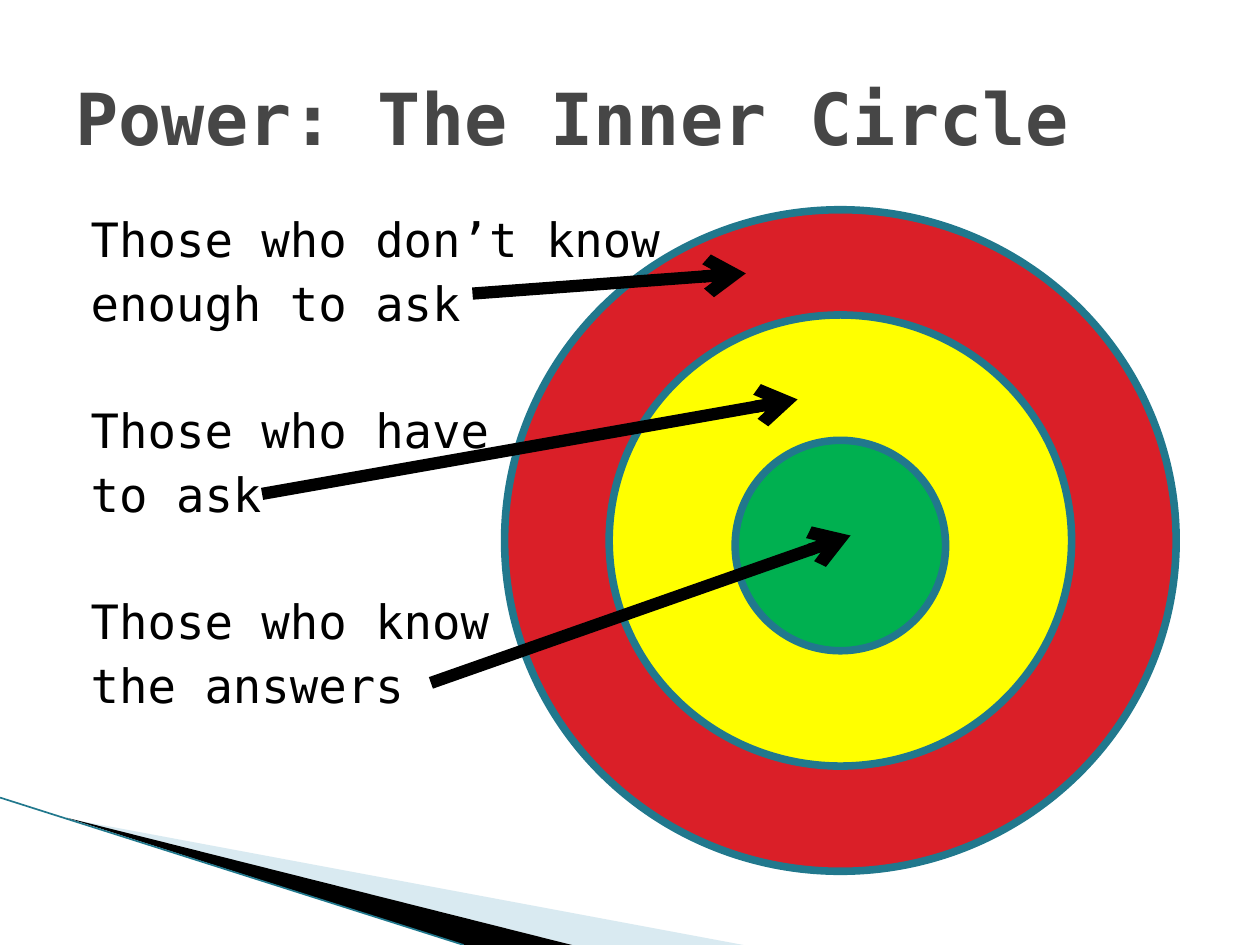
from lxml import etree
from pptx import Presentation
from pptx.dml.color import RGBColor
from pptx.enum import shapes, text
from pptx.oxml import ns
from pptx.util import Inches, Pt

WIDTH, HEIGHT = 10, 7.5
FONT = "DejaVu Sans Mono"
COLORS = {
    "title": "464646", "black": "000000", "outline": "21788D",
    "red": "DA1F28", "yellow": "FFFF00", "green": "00B050", "pale": "A0CBDC",
}
CENTER_X = 6.67
# Center height, width, height and fill, from the outer ring inwards
RINGS = [
    (4.29, 5.33, 5.25, "red"),
    (4.29, 3.67, 3.58, "yellow"),
    (4.33, 1.67, 1.67, "green"),
]
GROUPS = [
    ("Those who don’t know", "enough to ask"),
    ("Those who have", "to ask"),
    ("Those who know", "the answers"),
]
ARROWS = [
    ((3.75, 2.33), (5.92, 2.17)),
    ((2.08, 3.92), (6.33, 3.17)),
    ((3.42, 5.42), (6.75, 4.25)),
]
LINE_GAP, GROUP_GAP = 4, 40.4


def color(name):
    return RGBColor.from_string(COLORS[name])


def format_font(paragraph, color_name, **values):
    for name, value in {"name": FONT, **values}.items():
        setattr(paragraph.font, name, value)
    paragraph.font.color.rgb = color(color_name)


def place(shape, left, top, width, height):
    box = {"left": left, "top": top, "width": width, "height": height}
    for name, value in box.items():
        setattr(shape, name, Inches(value))


def add_wedge(slide, points, fill, alpha=100):
    corners = [(Inches(x), Inches(y)) for x, y in points]
    builder = slide.shapes.build_freeform(*corners[0], scale=1.0)
    builder.add_line_segments(corners[1:], close=True)
    shape = builder.convert_to_shape()
    shape.shadow.inherit = False
    shape.fill.solid()
    shape.fill.fore_color.rgb = color(fill)
    shape.line.fill.background()
    if alpha < 100:
        fill_color = shape._element.spPr.find(".//" + ns.qn("a:srgbClr"))
        etree.SubElement(fill_color, ns.qn("a:alpha"), val=str(alpha * 1000))


def add_line(slide, start, end, color_name, width, arrow=False):
    ends = [Inches(value) for value in (*start, *end)]
    line = slide.shapes.add_connector(shapes.MSO_CONNECTOR.STRAIGHT, *ends)
    line.line.color.rgb = color(color_name)
    line.line.width = Pt(width)
    if arrow:
        outline = line._element.spPr.find(ns.qn("a:ln"))
        etree.SubElement(outline, ns.qn("a:tailEnd"), type="arrow")
    etree.SubElement(line._element.spPr, ns.qn("a:effectLst"))


def add_ring(slide, center_y, width, height, fill):
    ring = slide.shapes.add_shape(shapes.MSO_SHAPE.OVAL, 0, 0, 0, 0)
    place(ring, CENTER_X - width / 2, center_y - height / 2, width, height)
    ring.shadow.inherit = False
    ring.fill.solid()
    ring.fill.fore_color.rgb = color(fill)
    ring.line.color.rgb = color("outline")
    ring.line.width = Pt(4.33)


def set_title(slide, wording):
    title = slide.shapes.title
    place(title, 0.5, 0.3, 9, 1.25)
    title.text_frame.text = wording
    title.text_frame.vertical_anchor = text.MSO_ANCHOR.MIDDLE
    paragraph = title.text_frame.paragraphs[0]
    paragraph.alignment = text.PP_ALIGN.LEFT
    format_font(paragraph, "title", size=Pt(41), bold=True)


def add_groups(slide):
    box = slide.shapes.add_textbox(0, 0, 0, 0)
    place(box, 0.5, 1.62, 9, 4.95)
    frame = box.text_frame
    frame.word_wrap = True
    frame.margin_left, frame.margin_top = Inches(0.22), Inches(0.05)
    paragraph = None
    for group in GROUPS:
        for index, wording in enumerate(group):
            if paragraph is None:
                paragraph = frame.paragraphs[0]
            else:
                paragraph = frame.add_paragraph()
                paragraph.space_before = Pt(LINE_GAP if index else GROUP_GAP)
            paragraph.text = wording
            format_font(paragraph, "black", size=Pt(27))


def main():
    presentation = Presentation()
    presentation.slide_width = Inches(WIDTH)
    presentation.slide_height = Inches(HEIGHT)
    slide = presentation.slides.add_slide(presentation.slide_layouts[5])

    # Corner decoration
    add_wedge(slide, [(0.55, 6.5), (5.9, HEIGHT), (4.54, HEIGHT)], "pale", 40)
    add_wedge(slide, [(0.53, 6.49), (4.54, HEIGHT), (3.68, HEIGHT)], "black")
    add_line(slide, (0, 6.33), (3.68, HEIGHT), "outline", 0.95)

    # Wording
    set_title(slide, "Power: The Inner Circle")
    add_groups(slide)

    # Target and its arrows
    for ring in RINGS:
        add_ring(slide, *ring)
    for start, end in ARROWS:
        add_line(slide, start, end, "black", 7, arrow=True)

    presentation.save("out.pptx")


if __name__ == "__main__":
    main()
